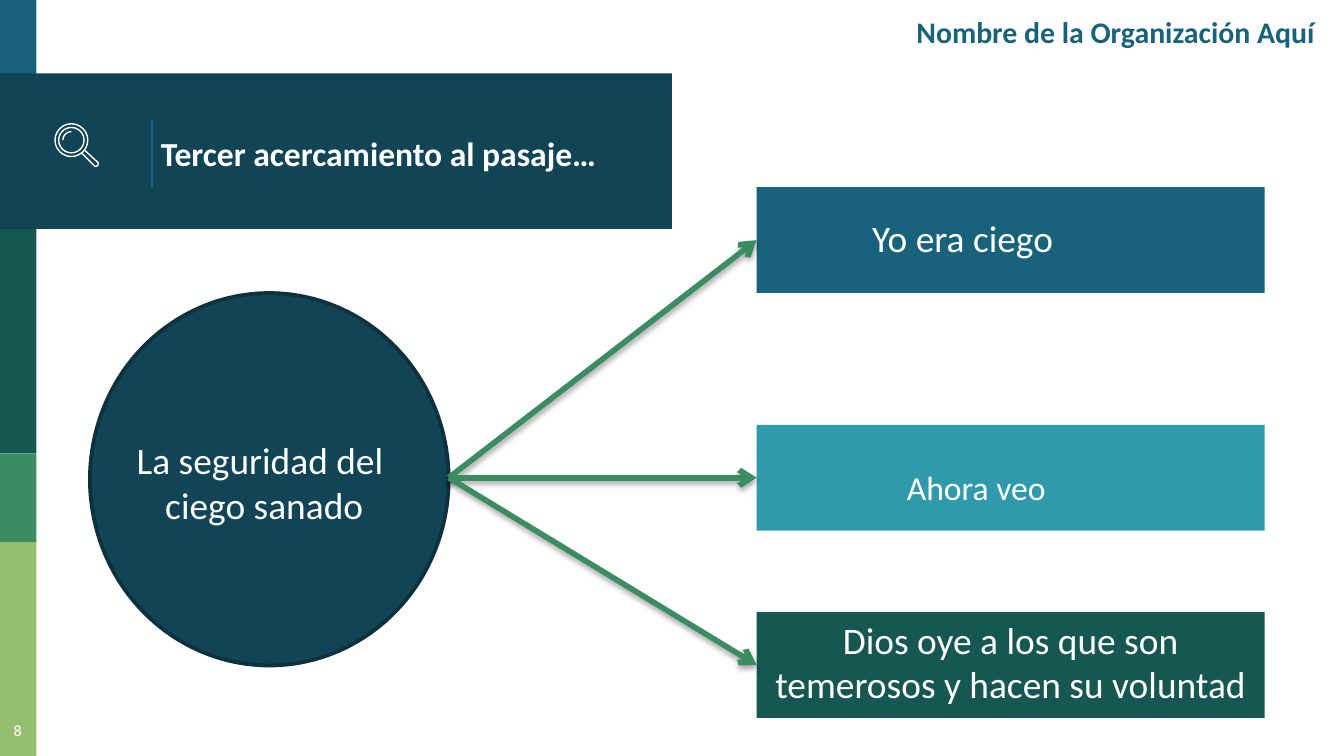
import math
from dataclasses import dataclass

import pptx
import pptx.dml.color
import pptx.enum.shapes
import pptx.enum.text
import pptx.oxml.ns
import pptx.util
from lxml import etree
from pptx.util import Cm

RGBColor = pptx.dml.color.RGBColor
Kind = pptx.enum.shapes.MSO_SHAPE
Align = pptx.enum.text.PP_ALIGN
Anchor = pptx.enum.text.MSO_ANCHOR
qn = pptx.oxml.ns.qn

WHITE = RGBColor(0xFF, 0xFF, 0xFF)
BLUE = RGBColor(0x18, 0x63, 0x7B)
NAVY = RGBColor(0x11, 0x44, 0x54)
EDGE = RGBColor(0x0D, 0x32, 0x3E)
PINE = RGBColor(0x16, 0x57, 0x51)
GREEN = RGBColor(0x3B, 0x8D, 0x61)
LIME = RGBColor(0x94, 0xBF, 0x6E)
TEAL = RGBColor(0x30, 0x9A, 0xAD)


@dataclass
class Area:
    left: float
    top: float
    width: float
    height: float

    def span(self) -> tuple:
        return Cm(self.left), Cm(self.top), Cm(self.width), Cm(self.height)


@dataclass
class Label:
    area: Area
    lines: list
    size: float
    color: RGBColor = WHITE
    bold: bool = False
    font: str = "Calibri"
    align: Align = Align.CENTER
    anchor: Anchor = Anchor.TOP
    inset: tuple = (0.25, 0.13, 0.25, 0.13)


@dataclass
class Claim:
    top: float
    fill: RGBColor
    label: Label


def assign(target, values: dict) -> None:
    for name, value in values.items():
        setattr(target, name, value)


def paint(shape, fill=None, edge=None, weight: float = 0.75) -> None:
    shape.shadow.inherit = False
    if fill is None:
        shape.fill.background()
    else:
        shape.fill.solid()
        shape.fill.fore_color.rgb = fill
    if edge is None:
        shape.line.fill.background()
    else:
        shape.line.color.rgb = edge
        shape.line.width = pptx.util.Pt(weight)


def draw(slide, kind: Kind, area: Area, fill=None, edge=None, weight: float = 0.75) -> None:
    paint(slide.shapes.add_shape(kind, *area.span()), fill, edge, weight)


def trace(slide, points: list) -> None:
    spots = [(Cm(x), Cm(y)) for x, y in points]
    pen = slide.shapes.build_freeform(*spots[0], scale=1.0)
    pen.add_line_segments(spots[1:], close=False)
    paint(pen.convert_to_shape(), edge=WHITE)


def write(shape, label: Label) -> None:
    left, top, right, bottom = (Cm(side) for side in label.inset)
    frame = shape.text_frame
    assign(frame, {
        "text": "\n".join(label.lines),
        "word_wrap": True,
        "auto_size": pptx.enum.text.MSO_AUTO_SIZE.NONE,
        "vertical_anchor": label.anchor,
        "margin_left": left,
        "margin_top": top,
        "margin_right": right,
        "margin_bottom": bottom,
    })
    style = {"name": label.font, "size": pptx.util.Pt(label.size), "bold": label.bold}
    for para in frame.paragraphs:
        para.alignment = label.align
        for run in para.runs:
            assign(run.font, style)
            run.font.color.rgb = label.color


def post(slide, label: Label) -> None:
    write(slide.shapes.add_textbox(*label.area.span()), label)


def link(slide, start: tuple, end: tuple, color: RGBColor, weight: float, arrow: bool = False) -> None:
    ends = [Cm(value) for value in start + end]
    line = slide.shapes.add_connector(pptx.enum.shapes.MSO_CONNECTOR.STRAIGHT, *ends)
    line.line.color.rgb = color
    line.line.width = pptx.util.Pt(weight)
    props = line.element.spPr
    effects = etree.SubElement(props, qn("a:effectLst"))
    if arrow:
        etree.SubElement(props.find(qn("a:ln")), qn("a:tailEnd"), type="arrow")
        shade = etree.SubElement(effects, qn("a:outerShdw"), blurRad="40000",
                                 dist="23000", dir="5400000", rotWithShape="0")
        tint = etree.SubElement(shade, qn("a:srgbClr"), val="000000")
        etree.SubElement(tint, qn("a:alpha"), val="35000")


def frame_page(slide) -> None:
    strips = [(0, 1.47, BLUE), (4.32, 8.57, PINE), (8.57, 10.25, GREEN), (10.25, 14.29, LIME)]
    for top, base, color in strips:
        draw(slide, Kind.RECTANGLE, Area(0, top, 0.69, base - top), color)
    draw(slide, Kind.RECTANGLE, Area(0, 1.39, 12.7, 2.94), NAVY)
    link(slide, (2.87, 2.26), (2.87, 3.56), BLUE, 0.75)


def draw_lens(slide) -> None:
    x, y = 1.35, 2.65
    for radius in (0.31, 0.24):
        draw(slide, Kind.OVAL, Area(x - radius, y - radius, 2 * radius, 2 * radius), edge=WHITE)
    turns = [math.radians(angle) for angle in range(180, 271, 10)]
    trace(slide, [(x + 0.16 * math.cos(turn), y + 0.16 * math.sin(turn)) for turn in turns])
    trace(slide, [(1.55, 2.9), (1.8, 3.15), (1.85, 3.13), (1.86, 3.08), (1.6, 2.84)])


def main() -> None:
    deck = pptx.Presentation()
    assign(deck, {"slide_width": Cm(25.4), "slide_height": Cm(14.29)})
    slide = deck.slides.add_slide(deck.slide_layouts[5])
    frame_page(slide)

    title = slide.shapes.title
    title.element.getparent().append(title.element)
    head = Label(Area(2.79, 1.47, 10.72, 2.84), ["Tercer acercamiento al pasaje…"], 18,
                 bold=True, align=Align.LEFT, anchor=Anchor.MIDDLE, inset=(0.25,) * 4)
    assign(title, dict(zip(("left", "top", "width", "height"), head.area.span())))
    write(title, head)
    draw_lens(slide)

    post(slide, Label(Area(-0.15, 13.39, 0.97, 0.89), ["8"], 8,
                      font="Roboto Slab", inset=(0.25,) * 4))
    post(slide, Label(Area(15.7, 0.15, 9.4, 1.55), ["Nombre de la Organización Aquí"], 16,
                      BLUE, True, align=Align.RIGHT, inset=(0.25, 0.11, 0.25, 0.25)))

    draw(slide, Kind.OVAL, Area(1.7, 5.54, 6.78, 7.04), NAVY, EDGE, 2)
    post(slide, Label(Area(1.3, 8.13, 7.39, 1.96), ["La seguridad del ", "ciego sanado"], 20))

    claims = [
        Claim(3.54, BLUE, Label(Area(14.5, 3.94, 7.39, 1.12), ["Yo era ciego"], 20)),
        Claim(8.03, TEAL, Label(Area(13.61, 8.69, 9.68, 1.02), ["Ahora veo"], 18)),
        Claim(11.57, PINE, Label(Area(14.3, 11.53, 9.6, 1.96),
                                 ["Dios oye a los que son temerosos y hacen su voluntad"], 20)),
    ]
    for claim in claims:
        draw(slide, Kind.RECTANGLE, Area(14.3, claim.top, 9.6, 2), claim.fill)
        link(slide, (8.48, 9.03), (14.3, claim.top + 1), GREEN, 3, True)
        post(slide, claim.label)

    deck.save("out.pptx")


if __name__ == "__main__":
    main()
